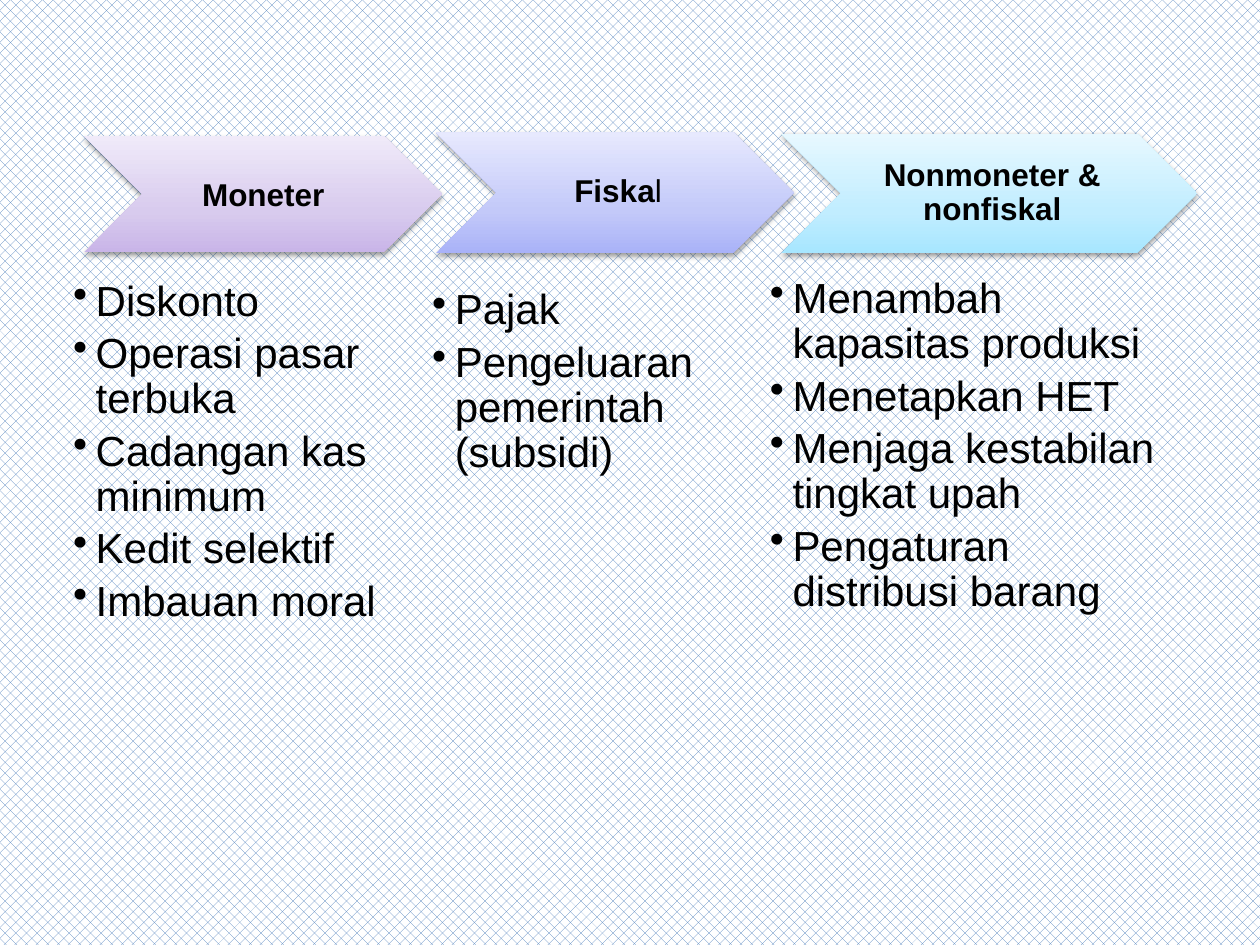
import pptx
import pptx.dml.color
import pptx.enum.dml
import pptx.enum.shapes
import pptx.enum.text
import pptx.oxml
import pptx.oxml.ns
import pptx.util

COLUMNS, ROWS = 100, 75
BODY_HEIGHT = 40.2
LABEL_INSETS = (0.8, 0.3, 0.3, 0.3)
POLICIES = [
    dict(chevron=(6.7, 10.8, 28.4, 9.2), colors=("C9B5E8", "D8CBEE", "F0EAF9"),
         label=[("Moneter", True)], insets=(0, 0, 0, 0), spacing=1.0,
         body=(5.1, 22.2, 26), items=["Diskonto", "Operasi pasar terbuka",
                                      "Cadangan kas minimum", "Kedit selektif",
                                      "Imbauan moral"]),
    dict(chevron=(34.6, 10.5, 28.4, 9.6), colors=("A9B2F8", "C3C9F9", "E7E9FE"),
         label=[("Fiska", True), ("l", False)], insets=LABEL_INSETS, spacing=0.9,
         body=(33.6, 22.9, 22.7), items=["Pajak", "Pengeluaran pemerintah (subsidi)"]),
    dict(chevron=(62, 10.6, 33, 9.5), colors=("A7E6FF", "C1EDFF", "E7F8FF"),
         label=[("Nonmoneter & nonfiskal", True)], insets=LABEL_INSETS, spacing=0.9,
         body=(60.4, 22, 33.7), items=["Menambah kapasitas produksi", "Menetapkan HET",
                                       "Menjaga kestabilan tingkat upah",
                                       "Pengaturan distribusi barang"]),
]


def rgb(value):
    """Return the colour of a hex string."""
    return pptx.dml.color.RGBColor.from_string(value)


def add_run(p, text, size=24, bold=False, color="000000", font="Arial"):
    """Add formatted text to a paragraph."""
    r = p.add_run()
    r.text = text
    r.font.size = pptx.util.Pt(size)
    r.font.bold = bold
    r.font.name = font
    r.font.color.rgb = rgb(color)


def drawing_xml(text):
    """Parse a DrawingML fragment."""
    tag, rest = text.split(" ", 1)
    return pptx.oxml.parse_xml(f"{tag} {pptx.oxml.ns.nsdecls('a')} {rest}")


class Deck:
    """Hold the style and the current slide."""

    def __init__(self):
        """Start a 4:3 presentation with one blank slide."""
        self.prs = pptx.Presentation()
        self.prs.slide_width = pptx.util.Inches(10)
        self.prs.slide_height = pptx.util.Inches(7.5)
        self.s = self.prs.slides.add_slide(self.prs.slide_layouts[6])

    def x(self, columns):
        """Convert grid columns to a length."""
        return round(self.prs.slide_width * columns / COLUMNS)

    def y(self, rows):
        """Convert grid rows to a length."""
        return round(self.prs.slide_height * rows / ROWS)

    def box(self, left, top, width, height):
        """Convert a grid box to lengths."""
        return self.x(left), self.y(top), self.x(width), self.y(height)

    def background(self, fore, back):
        """Fill the background with a pattern."""
        fill = self.s.background.fill
        fill.patterned()
        fill.pattern = pptx.enum.dml.MSO_PATTERN.from_xml("pct40")
        fill.fore_color.rgb = rgb(fore)
        fill.back_color.rgb = rgb(back)

    def chevron(self, at, colors):
        """Add a chevron with a gradient and a soft shadow."""
        sp = self.s.shapes.add_shape(pptx.enum.shapes.MSO_SHAPE.CHEVRON, *self.box(*at))
        sp.shadow.inherit = False
        sp.line.fill.background()
        stops = "".join(f'<a:gs pos="{pos}"><a:srgbClr val="{c}"/></a:gs>'
                        for pos, c in zip((0, 35000, 100000), colors))
        props = sp._element.spPr
        props.find(pptx.oxml.ns.qn("a:prstGeom")).addnext(drawing_xml(
            f'<a:gradFill rotWithShape="1"><a:gsLst>{stops}</a:gsLst>'
            '<a:lin ang="16200000" scaled="0"/></a:gradFill>'))
        props.find(pptx.oxml.ns.qn("a:effectLst")).append(drawing_xml(
            '<a:outerShdw blurRad="40000" dist="20000" dir="5400000" rotWithShape="0">'
            '<a:srgbClr val="000000"><a:alpha val="38000"/></a:srgbClr></a:outerShdw>'))

    def text_box(self, at, insets=(0, 0, 0, 0)):
        """Add a wrapping text box and return its frame."""
        tf = self.s.shapes.add_textbox(*self.box(*at)).text_frame
        tf.word_wrap = True
        tf.margin_left, tf.margin_right = self.x(insets[0]), self.x(insets[2])
        tf.margin_top, tf.margin_bottom = self.y(insets[1]), self.y(insets[3])
        return tf

    def label(self, chevron, runs, insets, spacing):
        """Add a centred label between the notch and tip of a chevron."""
        left, top, width, height = chevron
        tf = self.text_box((left + height / 2, top, width - height, height), insets)
        tf.vertical_anchor = pptx.enum.text.MSO_ANCHOR.MIDDLE
        p = tf.paragraphs[0]
        p.alignment = pptx.enum.text.PP_ALIGN.CENTER
        p.line_spacing = spacing
        for text, bold in runs:
            add_run(p, text, size=18, bold=bold)

    def bullets(self, at, items):
        """Add a bulleted list."""
        tf = self.text_box(at)
        for i, item in enumerate(items):
            p = tf.paragraphs[0] if i == 0 else tf.add_paragraph()
            p.level = 1
            p.line_spacing = 0.9
            p.space_after = pptx.util.Pt(4)
            props = p._p.get_or_add_pPr()
            props.set("marL", str(self.x(2.5)))
            props.set("indent", str(-self.x(1.8)))
            props.append(drawing_xml('<a:buChar char="•"/>'))
            add_run(p, item)


def main():
    """Build the slide of policy instruments."""
    deck = Deck()
    deck.background("4F81BD", "FFFFFF")
    for policy in POLICIES:
        deck.chevron(policy["chevron"], policy["colors"])
        deck.label(policy["chevron"], policy["label"], policy["insets"], policy["spacing"])
        deck.bullets((*policy["body"], BODY_HEIGHT), policy["items"])
    deck.prs.save("out.pptx")


if __name__ == "__main__":
    main()
